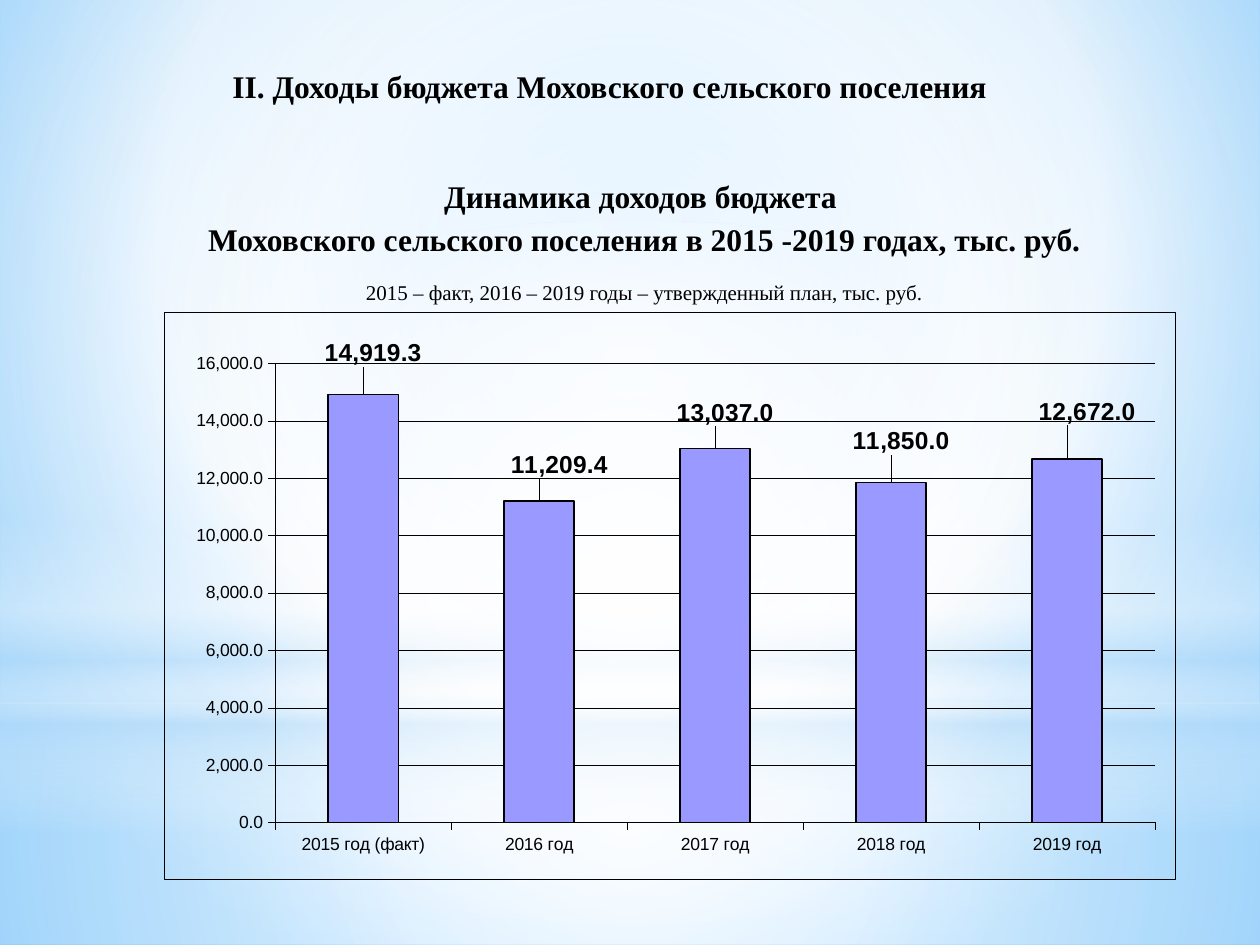
from lxml import etree
from pptx import Presentation
from pptx import oxml
from pptx.chart.data import CategoryChartData
from pptx.dml.color import RGBColor
from pptx.enum import chart as ch, shapes, text
from pptx.oxml import ns
from pptx.util import Inches, Pt

COLORS = {"ink": "000000", "white": "FFFFFF", "haze": "B4DCFA", "bar": "9999FF",
          "sky": "9ED5FF", "edge": "5BB9FF"}
INK = RGBColor.from_string(COLORS["ink"])
CENTER = (50, 50, 50, 50)


def apply_gradient(fill, element, stops, focus=None):
    """Fill with (position, colour, opacity) stops, radial round focus or else top to bottom."""
    fill.solid()
    solid = element.xpath(".//a:solidFill")[0]
    gradient = etree.Element(ns.qn("a:gradFill"), rotWithShape="1")
    stop_list = etree.SubElement(gradient, ns.qn("a:gsLst"))
    for position, color, opacity in stops:
        stop = etree.SubElement(stop_list, ns.qn("a:gs"), pos=str(position * 1000))
        rgb = etree.SubElement(stop, ns.qn("a:srgbClr"), val=COLORS[color])
        if opacity < 100:
            etree.SubElement(rgb, ns.qn("a:alpha"), val=str(opacity * 1000))
    if focus:
        radial = etree.SubElement(gradient, ns.qn("a:path"), path="circle")
        sides = {side: str(share * 1000) for side, share in zip("ltrb", focus)}
        etree.SubElement(radial, ns.qn("a:fillToRect"), **sides)
    else:
        etree.SubElement(gradient, ns.qn("a:lin"), ang="5400000", scaled="0")
    solid.getparent().replace(solid, gradient)


def format_paragraph(paragraph, size, bold, space_after):
    paragraph.alignment = text.PP_ALIGN.CENTER
    paragraph.line_spacing = 1.15
    paragraph.space_before = Pt(0)
    paragraph.space_after = Pt(space_after)
    for run in paragraph.runs:
        run.font.name = "Times New Roman"
        run.font.size = Pt(size)
        run.font.bold = bold
        run.font.color.rgb = INK


prs = Presentation()
prs.slide_width, prs.slide_height = Inches(10), Inches(7.5)
slide = prs.slides.add_slide(prs.slide_layouts[5])

# Background and its soft light layers, all behind the title
apply_gradient(slide.background.fill, slide.element,
               [(0, "sky", 100), (60, "white", 100), (100, "edge", 100)], (20, 10, 20, 60))
RECT, OVAL = shapes.MSO_SHAPE.RECTANGLE, shapes.MSO_SHAPE.OVAL
light_layers = [
    (RECT, 5.58, 1.92, [(0, "white", 91), (37, "white", 76), (100, "haze", 79)], CENTER),
    (RECT, 0, 5.58, [(0, "white", 89), (48, "white", 62), (100, "haze", 79)], CENTER),
    (RECT, 4.12, 2.5, [(0, "white", 0), (29, "white", 30), (45, "haze", 40),
                       (55, "white", 26), (65, "haze", 60), (100, "white", 0)], None),
    (OVAL, 1.75, 5.58, [(0, "white", 100), (56, "white", 0), (100, "white", 0)], CENTER),
]
title = slide.shapes.title
for outline, top, height, stops, focus in light_layers:
    layer = slide.shapes.add_shape(outline, 0, Inches(top), prs.slide_width, Inches(height))
    layer.shadow.inherit = False
    layer.line.fill.background()
    apply_gradient(layer.fill, layer.element, stops, focus)
    title.element.addprevious(layer.element)

# Headings
title.left, title.top, title.width, title.height = (
    Inches(1.06), Inches(0.44), Inches(7.56), Inches(0.42))
title.text_frame.text = "II. Доходы бюджета Моховского сельского поселения"
title.text_frame.vertical_anchor = text.MSO_ANCHOR.TOP
title.text_frame.auto_size = text.MSO_AUTO_SIZE.NONE
format_paragraph(title.text_frame.paragraphs[0], 18, True, 10)

subtitle = slide.shapes.add_textbox(Inches(0.51), Inches(1.31), Inches(9.21), Inches(1.17)).text_frame
subtitle.word_wrap = True
subtitle.text = ("Динамика доходов бюджета \v"
                 "Моховского сельского поселения в 2015 -2019 годах, тыс. руб.\n"
                 "2015 – факт, 2016 – 2019 годы – утвержденный план, тыс. руб.")
format_paragraph(subtitle.paragraphs[0], 18, True, 10)
format_paragraph(subtitle.paragraphs[1], 12, False, 0)

# Revenue chart
revenue = CategoryChartData(number_format="#,##0.0")
revenue.categories = ["2015 год (факт)", "2016 год", "2017 год", "2018 год", "2019 год"]
revenue.add_series("Доходы", [14919.3, 11209.4, 13037, 11850, 12672])
chart = slide.shapes.add_chart(ch.XL_CHART_TYPE.COLUMN_CLUSTERED, Inches(1.3), Inches(2.48),
                               Inches(8.03), Inches(4.5), revenue).chart
chart.has_legend = False
chart.has_title = False
chart.font.name, chart.font.size, chart.font.color.rgb = "Arial", Pt(10), INK

years, amounts = chart.category_axis, chart.value_axis
years.tick_label_position = ch.XL_TICK_LABEL_POSITION.LOW
amounts.minimum_scale, amounts.maximum_scale, amounts.major_unit = 0, 16000, 2000
amounts.tick_labels.number_format = "#,##0.0"
amounts.tick_labels.number_format_is_linked = False
amounts.has_major_gridlines = True
for axis in (years, amounts):
    axis.major_tick_mark = ch.XL_TICK_MARK.OUTSIDE
for line in (years.format.line, amounts.format.line, amounts.major_gridlines.format.line):
    line.color.rgb = INK
    line.width = Pt(0.25)

plot = chart.plots[0]
plot.gap_width = 150
plot.vary_by_categories = False
bars = plot.series[0]
bars.format.fill.solid()
bars.format.fill.fore_color.rgb = RGBColor.from_string(COLORS["bar"])
bars.format.line.color.rgb = INK
bars.format.line.width = Pt(1)

# Value labels, each nudged away from its bar by a share of the chart size
label_offsets = [(0.01, -0.04), (0.02, -0.03), (0.01, -0.03), (0.01, -0.04), (0.02, -0.05)]
for index, (dx, dy) in enumerate(label_offsets):
    label = bars.points[index].data_label
    label.font.name, label.font.size, label.font.bold = "Arial", Pt(14), True
    label.font.color.rgb = INK
    label.position = ch.XL_LABEL_POSITION.OUTSIDE_END
    label_idx = bars.data_labels._element.xpath(f"./c:dLbl/c:idx[@val='{index}']")[0]
    label_idx.addnext(oxml.parse_xml(
        f'<c:layout {ns.nsdecls("c")}><c:manualLayout>'
        f'<c:x val="{dx}"/><c:y val="{dy}"/></c:manualLayout></c:layout>'))
bars.data_labels.show_value = True

# Plot position and chart border
chart_space = chart.element
plot_area = chart_space.xpath(".//c:plotArea")[0]
for layout in plot_area.xpath("./c:layout"):
    plot_area.remove(layout)
plot_area.insert(0, oxml.parse_xml(
    f'<c:layout {ns.nsdecls("c")}><c:manualLayout><c:layoutTarget val="inner"/>'
    '<c:xMode val="edge"/><c:yMode val="edge"/><c:x val="0.11"/><c:y val="0.09"/>'
    '<c:w val="0.87"/><c:h val="0.81"/></c:manualLayout></c:layout>'))
chart_space.xpath("./c:txPr")[0].addprevious(oxml.parse_xml(
    f'<c:spPr {ns.nsdecls("c", "a")}><a:noFill/><a:ln w="{Pt(0.25)}"><a:solidFill>'
    f'<a:srgbClr val="{COLORS["ink"]}"/></a:solidFill></a:ln></c:spPr>'))

prs.save("out.pptx")
